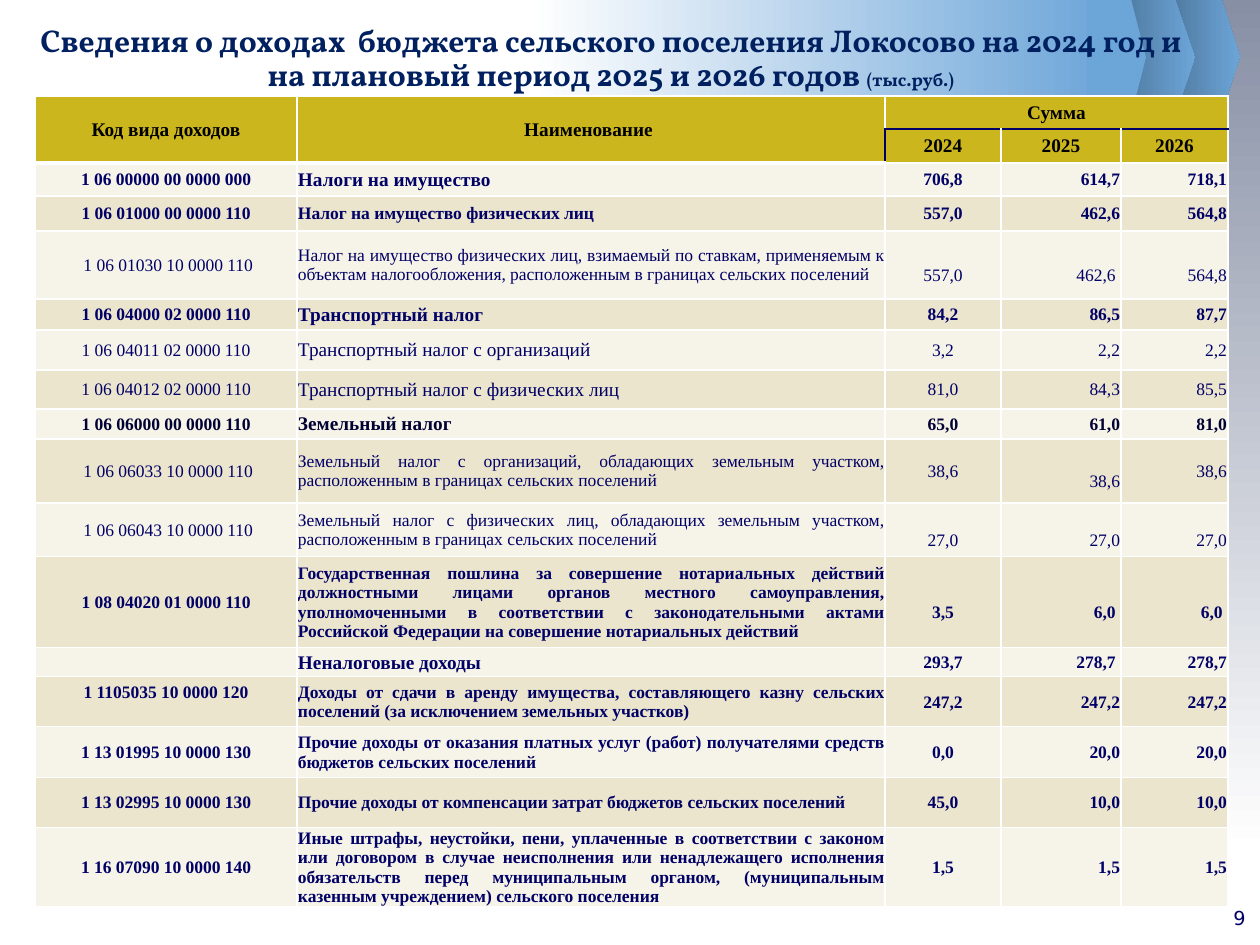
from lxml.etree import SubElement
from pptx import Presentation
from pptx.dml.color import RGBColor
from pptx.enum.shapes import MSO_CONNECTOR, MSO_SHAPE
from pptx.enum.text import MSO_ANCHOR, MSO_AUTO_SIZE, PP_ALIGN
from pptx.oxml import parse_xml
from pptx.oxml.ns import nsdecls, qn
from pptx.util import Emu, Pt

WHITE = RGBColor(0xFF, 0xFF, 0xFF)
BLACK = RGBColor(0, 0, 0)
NAVY = RGBColor(0, 0, 0x66)
DARK_NAVY = RGBColor(0, 0, 0x33)
TITLE_BLUE = RGBColor(0, 0x20, 0x60)
SKY = RGBColor(0x6C, 0xA5, 0xD8)
STEEL = RGBColor(0x4D, 0x76, 0x9B)
GREY = RGBColor(0x87, 0x8F, 0xA5)
GOLD = RGBColor(0xCB, 0xB6, 0x1D)
BANDS = (RGBColor(0xF6, 0xF3, 0xE8), RGBColor(0xEC, 0xE5, 0xCD))

LEFT, CENTER, RIGHT, JUSTIFY = (PP_ALIGN.LEFT, PP_ALIGN.CENTER,
                                PP_ALIGN.RIGHT, PP_ALIGN.JUSTIFY)
BODY_FONT = "Times New Roman"
COLUMNS = (262, 588, 116, 120, 107)
HEADER_ROWS = (33, 34)
YEARS = ("2024", "2025", "2026")
LINE = 20  # one text line, px

# height, code, name, name size, bold, values
INCOME = [
    (33, "1 06 00000 00 0000 000", "Налоги на имущество", 11, True, ("706,8", "614,7", "718,1")),
    (35, "1 06 01000 00 0000 110", "Налог на имущество физических лиц", 10, True,
     ("557,0", "462,6", "564,8")),
    (68, " 1 06 01030 10 0000 110",
     "Налог на имущество физических лиц, взимаемый по ставкам, применяемым к объектам "
     "налогообложения, расположенным в границах сельских поселений ", 10, False,
     ("557,0", "462,6 ", "564,8")),
    (31, "1 06 04000 02 0000 110", "Транспортный налог", 11, True, ("84,2", "86,5", "87,7")),
    (40, "1 06 04011 02 0000 110", "Транспортный налог с организаций", 11, False,
     ("3,2", "2,2", "2,2")),
    (39, "1 06 04012 02 0000 110", "Транспортный налог с физических лиц", 11, False,
     ("81,0", "84,3", "85,5")),
    (30, "1 06 06000 00 0000 110", "Земельный налог", 11, True, ("65,0", "61,0", "81,0")),
    (64, " 1 06 06033 10 0000 110",
     "Земельный налог с организаций, обладающих земельным участком, расположенным "
     "в границах сельских поселений", 10, False, ("38,6", "38,6", "38,6")),
    (54, " 1 06 06043 10 0000 110",
     "Земельный налог с физических лиц, обладающих земельным участком, расположенным "
     "в границах сельских поселений", 10, False, ("27,0", "27,0", "27,0")),
    (91, "1 08 04020 01 0000 110",
     "Государственная пошлина за совершение нотариальных действий должностными лицами "
     "органов местного самоуправления, уполномоченными в соответствии с законодательными "
     "актами Российской Федерации на совершение нотариальных действий", 10, True,
     ("3,5", "6,0 ", "6,0 ")),
    (29, "", "Неналоговые доходы", 11, True, ("293,7", "278,7 ", "278,7")),
    (50, "1 1105035 10 0000 120", "Доходы от сдачи в аренду имущества, составляющего казну "
     "сельских поселений (за исключением земельных участков)", 10, True,
     ("247,2", "247,2", "247,2")),
    (51, "1 13 01995 10 0000 130", "Прочие доходы от оказания платных услуг (работ) "
     "получателями средств бюджетов сельских поселений", 10, True, ("0,0", "20,0", "20,0")),
    (50, "1 13 02995 10 0000 130",
     "Прочие доходы от компенсации затрат бюджетов сельских поселений", 10, True,
     ("45,0", "10,0", "10,0")),
    (79, "1 16 07090 10 0000 140",
     "Иные штрафы, неустойки, пени, уплаченные в соответствии с законом или договором "
     "в случае неисполнения или ненадлежащего исполнения обязательств перед муниципальным "
     "органом, (муниципальным казенным учреждением) сельского поселения", 10, True,
     ("1,5", "1,5", "1,5")),
]
# (income row, column) of cells whose text sits half a line lower
LOWERED = {(r, c) for r in (2, 8, 9) for c in (2, 3, 4)} | {(7, 3)}
RAISED = {(11, 0)}
DARK_ROW = 6


def px(n):
    return Emu(round(n * 914400 / 126))


def add_text(p, text, size=10, font=BODY_FONT, color=NAVY, bold=False, align=LEFT):
    p.alignment = align
    if not text:
        SubElement(p._p, qn("a:endParaRPr"), sz=str(size * 100))
        return
    r = p.add_run()
    r.text = text
    r.font.size, r.font.name, r.font.bold = Pt(size), font, bold
    r.font.color.rgb = color


def add_block(slide, kind, x, y, w, h, colors, angle=0):
    sp = slide.shapes.add_shape(kind, px(x), px(y), px(w), px(h))
    sp.shadow.inherit = False
    sp.line.fill.background()
    if len(colors) == 1:
        sp.fill.solid()
        sp.fill.fore_color.rgb = colors[0]
    else:
        sp.fill.gradient()
        sp.fill.gradient_angle = angle
        for stop, color in zip(sp.fill.gradient_stops, colors):
            stop.color.rgb = color
    if kind == MSO_SHAPE.PENTAGON:
        sp.adjustments[0] = 0.25


def add_backdrop(slide, w, h):
    # Side strip and footer rule
    add_block(slide, MSO_SHAPE.RECTANGLE, w - 39, 0, 39, 853, (GREY, WHITE), 270)
    rule = slide.shapes.add_connector(MSO_CONNECTOR.STRAIGHT, px(42), px(h - 48),
                                      px(w - 31), px(h - 48))
    rule.line.color.rgb, rule.line.width = NAVY, Pt(0.75)
    SubElement(rule._element.spPr, qn("a:effectLst"))
    # Header band with arrows
    add_block(slide, MSO_SHAPE.PENTAGON, w - 94, -1, 74, 115, (STEEL, SKY))
    add_block(slide, MSO_SHAPE.PENTAGON, w - 144, 0, 79, 115, (STEEL, SKY))
    add_block(slide, MSO_SHAPE.RECTANGLE, w - 730, 0, 580, 115, (WHITE, SKY))
    add_block(slide, MSO_SHAPE.PENTAGON, w - 173, 0, 59, 115, (SKY,))


def add_title(slide, x, y, w, h):
    sp = slide.shapes.title
    sp.left, sp.top, sp.width, sp.height = px(x), px(y), px(w), px(h)
    slide.shapes._spTree.append(sp._element)  # in front of the backdrop
    tf = sp.text_frame
    tf.word_wrap, tf.auto_size = True, MSO_AUTO_SIZE.NONE
    tf.vertical_anchor = MSO_ANCHOR.MIDDLE
    p = tf.paragraphs[0]
    p.line_spacing = 0.9
    style = dict(font="Vollkorn", color=TITLE_BLUE, bold=True, align=CENTER)
    add_text(p, "Сведения о доходах  бюджета сельского поселения Локосово на 2024 год "
                "и на плановый период 2025 и 2026 годов ", size=18, **style)
    add_text(p, "(тыс.руб.)", size=10.5, **style)


def set_borders(cell, **special):
    tc_pr = cell._tc.get_or_add_tcPr()
    for i, side in enumerate("LRTB"):
        color, width = special.get(side, (WHITE, 1))
        tc_pr.insert(i, parse_xml(
            f'<a:ln{side} {nsdecls("a")} w="{Pt(width)}"><a:solidFill>'
            f'<a:srgbClr val="{color}"/></a:solidFill></a:ln{side}>'))


def fill_cell(cell, text, fill, top=0, bottom=0, borders=None, **style):
    cell.fill.solid()
    cell.fill.fore_color.rgb = fill
    cell.vertical_anchor = MSO_ANCHOR.MIDDLE
    cell.margin_left = cell.margin_right = px(1)
    cell.margin_top, cell.margin_bottom = px(1 + top), px(bottom)
    add_text(cell.text_frame.paragraphs[0], text, **style)
    set_borders(cell, **(borders or {}))


def add_income_table(slide, x, y):
    heights = HEADER_ROWS + tuple(row[0] for row in INCOME)
    frame = slide.shapes.add_table(len(heights), len(COLUMNS), px(x), px(y),
                                   px(sum(COLUMNS)), px(sum(heights)))
    table = frame.table
    table.first_row = table.horz_banding = False
    for col, w in zip(table.columns, COLUMNS):
        col.width = px(w)
    for row, h in zip(table.rows, heights):
        row.height = px(h)

    # Two-row header
    heads = (("Код вида доходов", "Наименование ", "Сумма", "", ""), ("", "") + YEARS)
    for i, texts in enumerate(heads):
        for j, text in enumerate(texts):
            borders = {"B": (WHITE, 3)} if j < 2 else {"TB"[1 - i]: (NAVY, 1)}
            if (i, j) == (1, 2):
                borders["L"] = (NAVY, 1)
            fill_cell(table.cell(i, j), text, GOLD, borders=borders,
                      size=11, color=BLACK, bold=True, align=CENTER)
    for j in (0, 1):
        table.cell(0, j).merge(table.cell(1, j))
    table.cell(0, 2).merge(table.cell(0, 4))

    # Income rows
    aligns = (CENTER, JUSTIFY, CENTER, RIGHT, RIGHT)
    for i, (_, code, name, name_size, bold, values) in enumerate(INCOME):
        for j, text in enumerate((code, name) + values):
            fill_cell(table.cell(i + len(HEADER_ROWS), j), text, BANDS[i % 2],
                      top=LINE * ((i, j) in LOWERED), bottom=LINE * ((i, j) in RAISED),
                      size=name_size if j == 1 else 10, bold=bold, align=aligns[j],
                      color=DARK_NAVY if i == DARK_ROW else NAVY)


def add_page_number(slide, x, y, w, h):
    tf = slide.shapes.add_textbox(px(x), px(y), px(w), px(h)).text_frame
    tf.word_wrap = True
    add_text(tf.paragraphs[0], "9", size=11, font="DejaVu Sans")


def main():
    prs = Presentation()
    prs.slide_width, prs.slide_height = px(1260), px(945)
    slide = prs.slides.add_slide(prs.slide_layouts[5])
    add_backdrop(slide, 1260, 945)
    add_title(slide, 25, 16, 1172, 86)
    add_income_table(slide, 35, 96)
    add_page_number(slide, 1221, 900, 39, 45)
    prs.save("out.pptx")


if __name__ == "__main__":
    main()
